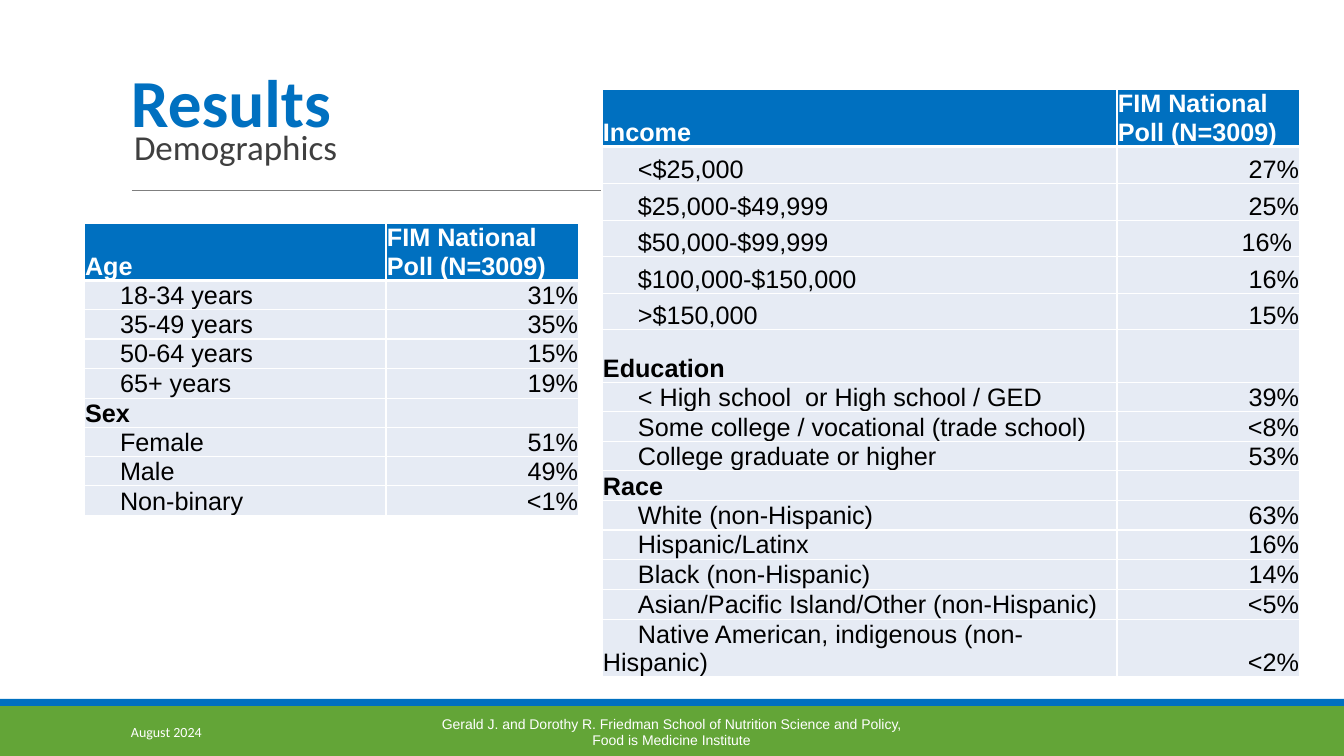
from lxml import etree
from pptx import Presentation
from pptx import util as u
from pptx.dml.color import RGBColor
from pptx.enum import shapes, text
from pptx.oxml import ns

BLUE = RGBColor(0x00, 0x70, 0xC0)
GREEN = RGBColor(0x63, 0xA5, 0x37)
PALE = RGBColor(0xE6, 0xEB, 0xF4)
GRAY = RGBColor(0x7F, 0x7F, 0x7F)
DARK = RGBColor(0x3F, 0x3F, 0x3F)
BLACK = RGBColor(0x00, 0x00, 0x00)
WHITE = RGBColor(0xFF, 0xFF, 0xFF)

WIDE, HIGH = 1344, 756
SCALE = 12192000 / WIDE
POLL = "FIM National Poll (N=3009)"

AGE = [
    ("Age", POLL),
    ("18-34 years", "31%"),
    ("35-49 years", "35%"),
    ("50-64 years", "15%"),
    ("65+ years", "19%"),
    ("Sex", ""),
    ("Female", "51%"),
    ("Male", "49%"),
    ("Non-binary", "<1%"),
]
INCOME = [
    ("Income", POLL),
    ("<$25,000", "27%"),
    ("$25,000-$49,999", "25%"),
    ("$50,000-$99,999", "16% "),
    ("$100,000-$150,000", "16%"),
    (">$150,000", "15%"),
    ("Education", ""),
    ("< High school  or High school / GED", "39%"),
    ("Some college / vocational (trade school)", "<8%"),
    ("College graduate or higher", "53%"),
    ("Race", ""),
    ("White (non-Hispanic)", "63%"),
    ("Hispanic/Latinx", "16%"),
    ("Black (non-Hispanic)", "14%"),
    ("Asian/Pacific Island/Other (non-Hispanic)", "<5%"),
    ("Native American, indigenous (non-Hispanic)", "<2%"),
]
AGE_ROWS = [57, 29, 29, 29, 30, 29, 29, 29, 30]
INCOME_ROWS = [57, 37, 37, 36, 37, 36, 53, 29, 30, 29, 30, 29, 29, 30, 30, 57]


def px(n):
    return u.Emu(round(n * SCALE))


def place(shape, box):
    shape.left, shape.top, shape.width, shape.height = map(px, box)


def write(frame, words, size=18, face="Arial", color=BLACK, bold=False,
          align=text.PP_ALIGN.LEFT, space=1.0, left=0, first=0):
    frame.word_wrap = True
    for i, line in enumerate(words.split("\n")):
        para = frame.paragraphs[0] if i == 0 else frame.add_paragraph()
        para.alignment = align
        para.line_spacing = space
        para.space_before = u.Pt(0)
        props = para._p.get_or_add_pPr()
        props.set("marL", str(px(left)))
        props.set("indent", str(px(first)))
        etree.SubElement(props, ns.qn("a:buNone"))
        if not line:
            end = etree.SubElement(para._p, ns.qn("a:endParaRPr"))
            end.set("sz", "1200")
            continue
        run = para.add_run()
        run.text = line
        run.font.size = u.Pt(size)
        run.font.name = face
        run.font.bold = bold
        run.font.color.rgb = color


def pad(frame, side, top, anchor):
    frame.margin_left = frame.margin_right = px(side)
    frame.margin_top = frame.margin_bottom = px(top)
    frame.vertical_anchor = anchor
    frame.auto_size = text.MSO_AUTO_SIZE.NONE


def edge(cell, base):
    props = cell._tc.get_or_add_tcPr()
    for i, (tag, width) in enumerate(
            [("a:lnL", 1), ("a:lnR", 1), ("a:lnT", 1), ("a:lnB", base)]):
        line = etree.Element(ns.qn(tag), w=str(u.Pt(width)))
        fill = etree.SubElement(line, ns.qn("a:solidFill"))
        etree.SubElement(fill, ns.qn("a:srgbClr"), val=str(WHITE))
        props.insert(i, line)


def heading(slide, box):
    x, y, w, h = box
    title = slide.shapes.title
    place(title, (x, y, w, h))
    pad(title.text_frame, 10, 5, text.MSO_ANCHOR.BOTTOM)
    write(title.text_frame, "Results", size=48, face="Calibri", color=BLUE,
          bold=True, space=0.85)
    body = slide.placeholders[1]
    place(body, (x - 37, y + 94, 481, 42))
    pad(body.text_frame, 0, 5, text.MSO_ANCHOR.TOP)
    write(body.text_frame, "Demographics", size=25, face="Calibri",
          color=DARK, space=0.9, left=50)
    rule = slide.shapes.add_connector(
        shapes.MSO_CONNECTOR.STRAIGHT, px(x + 11), px(y + 160),
        px(x + w + 1), px(y + 160))
    rule.line.color.rgb = GRAY
    rule.line.width = u.Pt(0.75)
    etree.SubElement(rule._element.spPr, ns.qn("a:effectLst"))


def table(slide, box, data, cols, rows):
    grid = slide.shapes.add_table(len(data), len(cols), *map(px, box)).table
    grid.first_row = grid.horz_banding = False
    for col, width in zip(grid.columns, cols):
        col.width = px(width)
    for r, (row, high) in enumerate(zip(data, rows)):
        grid.rows[r].height = px(high)
        head = r == 0
        group = head or not row[1]
        for c, words in enumerate(row):
            cell = grid.cell(r, c)
            cell.margin_left = cell.margin_right = cell.margin_top = px(1)
            cell.margin_bottom = 0
            cell.vertical_anchor = text.MSO_ANCHOR.BOTTOM
            cell.fill.solid()
            cell.fill.fore_color.rgb = BLUE if head else PALE
            edge(cell, 3 if head else 1)
            right = c == 1 and not head
            write(cell.text_frame, words, bold=group,
                  color=WHITE if head else BLACK,
                  align=text.PP_ALIGN.RIGHT if right else text.PP_ALIGN.LEFT,
                  first=0 if group or right else 35)


def footer(slide, box):
    x, y, w, h = box
    for top, high, color in [(y + 7, h - 7, GREEN), (y, 7, BLUE)]:
        band = slide.shapes.add_shape(
            shapes.MSO_SHAPE.RECTANGLE, *map(px, (x, top, w, high)))
        band.shadow.inherit = False
        band.fill.solid()
        band.fill.fore_color.rgb = color
        band.line.fill.background()
    school = ("Gerald J. and Dorothy R. Friedman School of Nutrition Science "
              "and Policy,\nFood is Medicine Institute")
    for left, wide, words, face, align in [
            (121, 272, "August 2024", "Calibri", text.PP_ALIGN.LEFT),
            (406, 531, school, "Arial", text.PP_ALIGN.CENTER)]:
        note = slide.shapes.add_textbox(
            *map(px, (x + left, y + 13, wide, 40)))
        pad(note.text_frame, 10, 5, text.MSO_ANCHOR.MIDDLE)
        write(note.text_frame, words, size=10, face=face, color=WHITE,
              align=align)


def main():
    deck = Presentation()
    deck.slide_width, deck.slide_height = px(WIDE), px(HIGH)
    slide = deck.slides.add_slide(deck.slide_layouts[1])
    heading(slide, (121, 31, 1109, 115))
    footer(slide, (0, 699, WIDE, HIGH - 699))
    table(slide, (84, 223, 495, 291), AGE, (302, 193), AGE_ROWS)
    table(slide, (602, 89, 698, 586), INCOME, (515, 183), INCOME_ROWS)
    deck.save("out.pptx")


if __name__ == "__main__":
    main()
